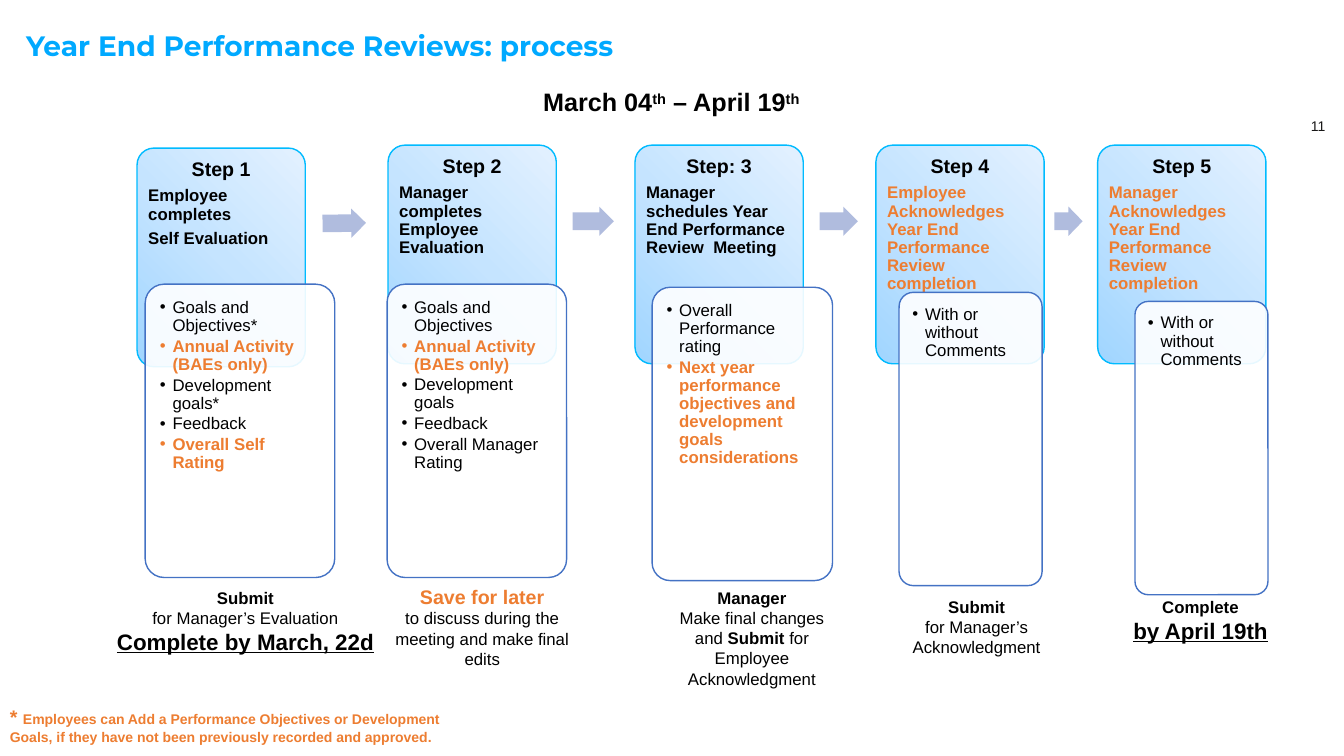
"""Build the year end review process slide."""
from dataclasses import dataclass
from typing import Any, NamedTuple

from lxml.etree import SubElement
from pptx import Presentation
from pptx.dml.color import RGBColor
from pptx.enum.shapes import MSO_SHAPE
from pptx.enum.text import MSO_ANCHOR, MSO_AUTO_SIZE, PP_ALIGN
from pptx.oxml import parse_xml
from pptx.oxml.ns import nsdecls, qn
from pptx.util import Pt


@dataclass(frozen=True)
class Theme:
    font: str = "Arial"
    brand: str = "Montserrat"
    title: str = "00A9FF"
    ink: str = "000000"
    page: str = "181717"
    accent: str = "ED7D31"
    edge: str = "00BBFF"
    border: str = "4472C4"
    panel: str = "FFFFFF"
    arrow: str = "B0BCDE"
    shades: tuple = ((0, "A0D5FF"), (50, "C5E4FF"), (100, "E3F1FF"))
    note: float = 10
    text: float = 12
    head: float = 14
    call: float = 16
    date: float = 18
    top: float = 20


THEME = Theme()


class Box(NamedTuple):
    left: float
    top: float
    width: float
    height: float


class Run(NamedTuple):
    text: str
    size: float = THEME.text
    color: str = THEME.ink
    bold: bool = False
    under: bool = False
    raised: bool = False
    font: str = THEME.font


class Style(NamedTuple):
    inset: tuple = (7.2, 3.6, 7.2, 3.6)
    align: Any = PP_ALIGN.LEFT
    anchor: Any = MSO_ANCHOR.TOP
    pitch: float = 1
    after: float = 0
    bullet: bool = False


class Step(NamedTuple):
    card: Box
    panel: Box
    label: str
    tasks: list[Run]
    items: list[Run]
    foot: Box
    close: list[list[Run]]


class Arrow(NamedTuple):
    box: Box
    turn: float = 0


def strong(text: str, size: float = THEME.text, color: str = THEME.ink,
           under: bool = False) -> Run:
    """Return a bold run."""
    return Run(text, size, color, True, under)


def hot(text: str, size: float = THEME.text) -> Run:
    """Return a bold run in the accent colour."""
    return strong(text, size, THEME.accent)


def card(left: float, top: float = 103.7) -> Box:
    """Return the box of a step card."""
    return Box(left, top, 120.2, 156.2)


def panel(left: float, top: float, width: float) -> Box:
    """Return the box of a list panel."""
    return Box(left, top, width, 209.5)


CENTER = Style(align=PP_ALIGN.CENTER)
HEAD = Style((8, 8, 8, 4.3), PP_ALIGN.CENTER, pitch=0.9, after=4.9)
TASK = HEAD._replace(align=PP_ALIGN.LEFT, after=4.2)
LIST = Style((6.5, 6.5, 6.5, 6.5), pitch=0.9, after=1.8, bullet=True)
TITLE = Style(anchor=MSO_ANCHOR.MIDDLE, pitch=0.9)
PAGE = Style((7.2, 3.6, 3.6, 3.6), PP_ALIGN.RIGHT, MSO_ANCHOR.MIDDLE)

STEPS = [
    Step(card(97.9, 105.8), panel(103.7, 203, 135.4), "Step 1",
         [strong("Employee completes"), strong("Self Evaluation")],
         [Run("Goals and Objectives*"), hot("Annual Activity (BAEs only)"),
          Run("Development goals*"), Run("Feedback"), hot("Overall Self Rating")],
         Box(54.7, 416.2, 241.2, 55.4),
         [[strong("Submit")], [Run("for Manager’s Evaluation")],
          [strong("Complete by March, 22d", THEME.call, under=True)]]),
    Step(card(277.2), panel(276.5, 203, 128.2), "Step 2",
         [strong("Manager completes Employee Evaluation")],
         [Run("Goals and Objectives"), hot("Annual Activity (BAEs only)"),
          Run("Development goals"), Run("Feedback"), Run("Overall Manager Rating")],
         Box(262.8, 414, 163.4, 67.7),
         [[hot("Save for later", THEME.head)],
          [Run("to discuss during the meeting and make final edits")]]),
    Step(card(453.6), panel(465.8, 205.2, 128.9), "Step: 3",
         [strong("Manager schedules Year End Performance Review  Meeting")],
         [Run("Overall Performance rating"),
          hot("Next year performance objectives and development goals considerations")],
         Box(467.3, 416.2, 139.7, 80),
         [[strong("Manager")],
          [Run("Make final changes and "), strong("Submit "),
           Run("for Employee Acknowledgment")]]),
    Step(card(625.7), panel(642.2, 208.8, 102.2), "Step 4",
         [hot("Employee Acknowledges Year End Performance Review completion")],
         [Run("With or without Comments")],
         Box(638.6, 422.6, 118.1, 51),
         [[strong("Submit")], [Run("for Manager’s Acknowledgment")]]),
    Step(card(784.1), panel(810.7, 215.3, 95), "Step 5",
         [hot("Manager Acknowledges Year End Performance Review completion")],
         [Run("With or without Comments")],
         Box(798.5, 422.6, 118.1, 41),
         [[strong("Complete")], [strong("by April 19th", THEME.call, under=True)]]),
]
ARROWS = [Arrow(Box(230.4, 149, 31, 20.9), -0.7), Arrow(Box(409, 147.6, 29.5, 20.9)),
          Arrow(Box(585.4, 147.6, 27.4, 20.9)), Arrow(Box(753.1, 147.6, 20.2, 20.9))]


def place(shape: Any, box: Box) -> None:
    """Move a shape to its box."""
    shape.left, shape.top, shape.width, shape.height = map(Pt, box)


def write(shape: Any, lines: list[list[Run]], styles: list[Style]) -> None:
    """Fill a shape with lines, one style for each."""
    frame = shape.text_frame
    frame.auto_size = MSO_AUTO_SIZE.NONE
    frame.word_wrap = True
    frame.vertical_anchor = styles[0].anchor
    (frame.margin_left, frame.margin_top,
     frame.margin_right, frame.margin_bottom) = map(Pt, styles[0].inset)
    for row, (line, style) in enumerate(zip(lines, styles)):
        para = frame.add_paragraph() if row else frame.paragraphs[0]
        para.alignment, para.line_spacing = style.align, style.pitch
        para.space_before, para.space_after = Pt(0), Pt(style.after)
        if style.bullet:
            props = para._p.get_or_add_pPr()
            props.set("marL", str(Pt(9)))
            props.set("indent", str(-Pt(9)))
            SubElement(props, qn("a:buFont"), typeface=THEME.font)
            SubElement(props, qn("a:buChar"), char="•")
        for item in line:
            run = para.add_run()
            run.text = item.text
            font = run.font
            font.name, font.size = item.font, Pt(item.size)
            font.bold, font.underline = item.bold, item.under
            font.color.rgb = RGBColor.from_string(item.color)
            if item.raised:
                run._r.get_or_add_rPr().set("baseline", "30000")


def label(slide: Any, box: Box, lines: list[list[Run]], styles: list[Style]) -> None:
    """Add a text box."""
    write(slide.shapes.add_textbox(*map(Pt, box)), lines, styles)


def draw(slide: Any, kind: Any, box: Box, fill: str, edge: str = "") -> Any:
    """Add a flat shape with a solid fill."""
    shape = slide.shapes.add_shape(kind, *map(Pt, box))
    shape.shadow.inherit = False
    shape.fill.solid()
    shape.fill.fore_color.rgb = RGBColor.from_string(fill)
    if kind == MSO_SHAPE.ROUNDED_RECTANGLE:
        shape.adjustments[0] = 0.1
    if edge:
        shape.line.color.rgb = RGBColor.from_string(edge)
        shape.line.width = Pt(1)
    else:
        shape.line.fill.background()
    return shape


def shade(shape: Any) -> None:
    """Give a shape the radial card fill."""
    stops = "".join(f'<a:gs pos="{pos * 1000}"><a:srgbClr val="{color}"/></a:gs>'
                    for pos, color in THEME.shades)
    props = shape.element.spPr
    props.replace(props.find(qn("a:solidFill")), parse_xml(
        f'<a:gradFill {nsdecls("a")} rotWithShape="1"><a:gsLst>{stops}</a:gsLst>'
        '<a:path path="circle"><a:fillToRect t="100000" r="100000"/></a:path></a:gradFill>'))


def build(slide: Any, step: Step, spot: Any) -> None:
    """Draw one step and put its list in the given spot."""
    block = MSO_SHAPE.ROUNDED_RECTANGLE
    shade(draw(slide, block, step.card, THEME.panel, THEME.edge))
    label(slide, step.card._replace(height=59),
          [[strong(step.label, THEME.head)]] + [[task] for task in step.tasks],
          [HEAD] + [TASK] * len(step.tasks))
    pane = draw(slide, block, step.panel, THEME.panel, THEME.border)
    tint = pane.element.spPr.find(qn("a:solidFill")).find(qn("a:srgbClr"))
    SubElement(tint, qn("a:alpha"), val="90000")
    left, top, width, height = step.panel
    gap = 0.03 * width
    spot.element.getparent().append(spot.element)
    place(spot, Box(left + gap, top + gap, width - 2 * gap, height - 2 * gap))
    write(spot, [[item] for item in step.items], [LIST] * len(step.items))
    label(slide, step.foot, step.close, [CENTER] * len(step.close))


def main() -> None:
    """Build and save the slide."""
    deck = Presentation()
    deck.slide_width, deck.slide_height = Pt(960), Pt(540)
    slide = deck.slides.add_slide(deck.slide_layouts.get_by_name("Comparison"))
    title = slide.shapes.title
    place(title, Box(11.5, 19.4, 704.9, 29.5))
    write(title, [[Run("Year End Performance Reviews: process", THEME.top, THEME.title,
                       True, font=THEME.brand)]], [TITLE])
    spots = [spot for spot in slide.placeholders if spot.placeholder_format.idx > 0]
    spots.append(slide.shapes.add_textbox(*map(Pt, STEPS[-1].panel)))
    for step, spot in zip(STEPS, spots):
        build(slide, step, spot)
    for arrow in ARROWS:
        draw(slide, MSO_SHAPE.RIGHT_ARROW, arrow.box, THEME.arrow).rotation = arrow.turn
    for shape in slide.shapes:
        if shape.name.startswith("Right Arrow"):
            shape.adjustments[0] = 0.6
    label(slide, Box(298.8, 58.3, 361.4, 29.5),
          [[strong("March 04", THEME.date), Run("th", THEME.date, bold=True, raised=True),
            strong(" – April 19", THEME.date),
            Run("th", THEME.date, bold=True, raised=True)]], [CENTER])
    label(slide, Box(0, 499.7, 342.7, 36),
          [[hot("* ", THEME.head),
            hot("Employees can Add a Performance Objectives or Development Goals, "
                "if they have not been previously recorded and approved.", THEME.note)]],
          [Style()])
    label(slide, Box(900, 77, 50.4, 25.2), [[Run("11", THEME.note, THEME.page)]], [PAGE])
    deck.save("out.pptx")


if __name__ == "__main__":
    main()
